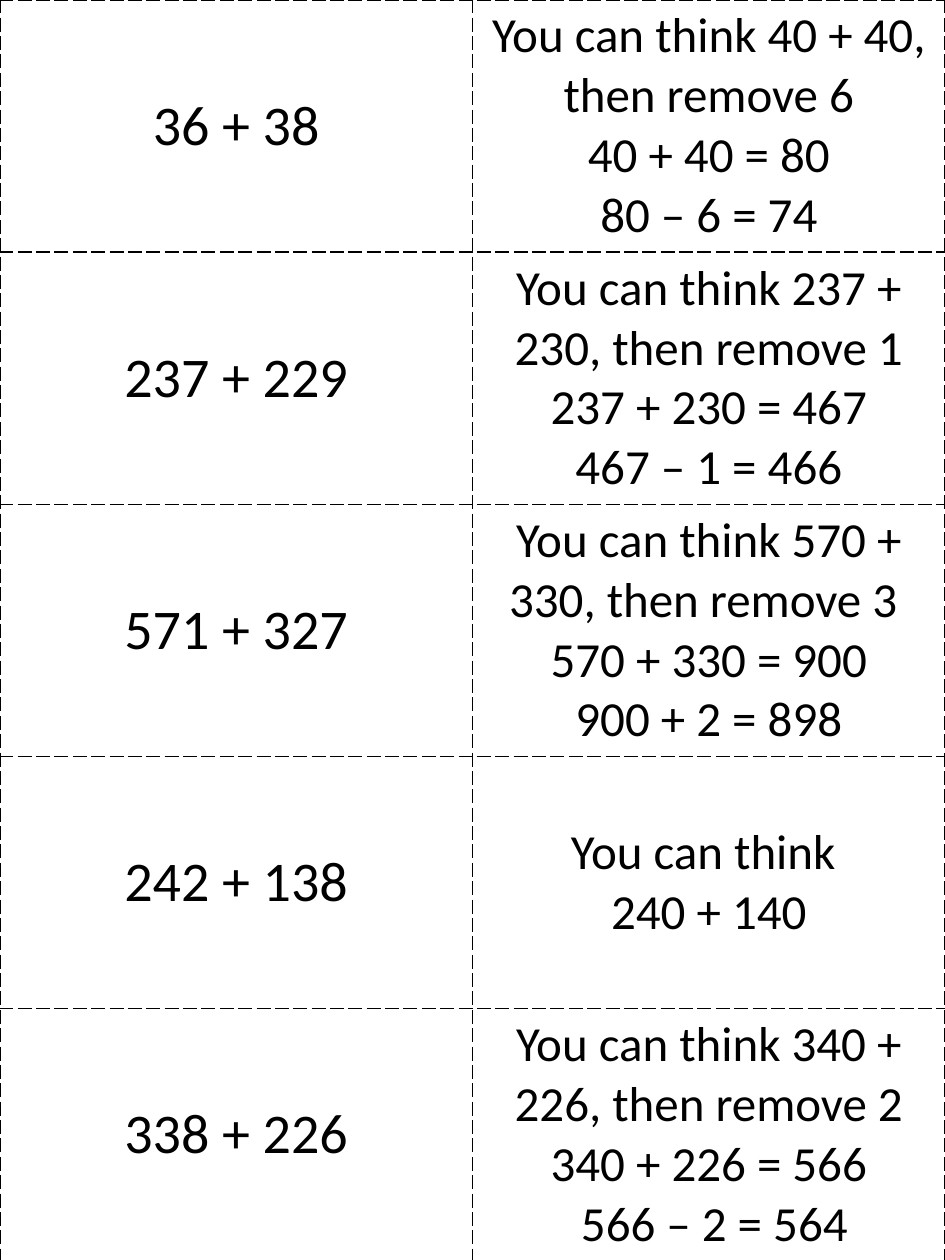
from lxml.etree import SubElement
from pptx import Presentation
from pptx.dml.color import RGBColor
from pptx.enum.text import MSO_ANCHOR as Anchor, PP_ALIGN as Align
from pptx.oxml.ns import qn
from pptx.util import Pt

COLORS = {"ink": "000000", "paper": "FFFFFF"}
FONT = "Calibri"
PAGE_WIDTH, PAGE_HEIGHT = 540, 720
SUM_SIZE, HINT_SIZE = 32, 28

CARDS = [
    ("36 + 38", ["You can think 40 + 40, then remove 6",
                 "40 + 40 = 80", "80 – 6 = 74"]),
    ("237 + 229", ["You can think 237 + 230, then remove 1",
                   "237 + 230 = 467", "467 – 1 = 466"]),
    ("571 + 327", ["You can think 570 + 330, then remove 3 ",
                   "570 + 330 = 900", "900 + 2 = 898"]),
    ("242 + 138", ["You can think ", "240 + 140"]),
    ("338 + 226", ["You can think 340 + 226, then remove 2",
                   "340 + 226 = 566", " 566 – 2 = 564"]),
]


def add_cut_lines(cell):
    properties = cell._tc.get_or_add_tcPr()
    for side in ("a:lnL", "a:lnR", "a:lnT", "a:lnB"):
        line = SubElement(properties, qn(side), w=str(Pt(1)))
        fill = SubElement(line, qn("a:solidFill"))
        SubElement(fill, qn("a:srgbClr"), val=COLORS["ink"])
        SubElement(line, qn("a:prstDash"), val="lgDash")


def write_cell(cell, lines, size):
    add_cut_lines(cell)
    cell.fill.solid()
    cell.fill.fore_color.rgb = RGBColor.from_string(COLORS["paper"])
    cell.vertical_anchor = Anchor.MIDDLE
    frame = cell.text_frame
    for index, line in enumerate(lines):
        para = frame.add_paragraph() if index else frame.paragraphs[0]
        para.alignment = Align.CENTER
        span = para.add_run()
        span.text = line
        span.font.name = FONT
        span.font.size = Pt(size)
        span.font.color.rgb = RGBColor.from_string(COLORS["ink"])


def add_card_table(page):
    table = page.shapes.add_table(
        len(CARDS), 2, Pt(0), Pt(0), Pt(PAGE_WIDTH), Pt(PAGE_HEIGHT)).table
    table.first_row = False
    table.horz_banding = False
    for row, (problem, hint) in enumerate(CARDS):
        write_cell(table.cell(row, 0), [problem], SUM_SIZE)
        write_cell(table.cell(row, 1), hint, HINT_SIZE)


def main():
    deck = Presentation()
    deck.slide_width = Pt(PAGE_WIDTH)
    deck.slide_height = Pt(PAGE_HEIGHT)
    page = deck.slides.add_slide(deck.slide_layouts[6])
    add_card_table(page)
    deck.save("out.pptx")


if __name__ == "__main__":
    main()
